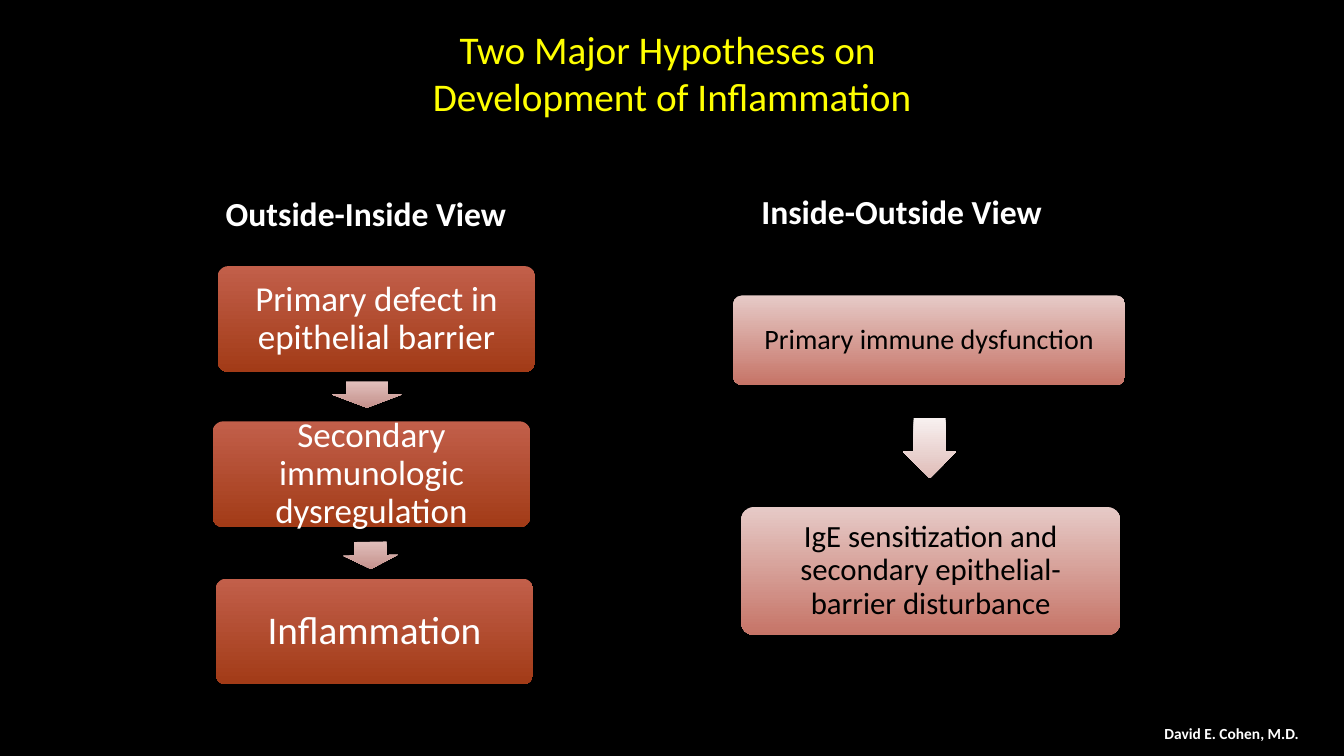
from pptx import Presentation
from pptx.dml.color import RGBColor
from pptx.enum.shapes import MSO_SHAPE as Preset
from pptx.enum.text import MSO_ANCHOR as Anchor, MSO_AUTO_SIZE as AutoSize, PP_ALIGN as Align
from pptx.util import Inches, Pt

SLIDE_W, SLIDE_H = 13.33, 7.5
COLUMNS, ROWS = 40, 30
BLACK, WHITE, YELLOW = "000000", "FFFFFF", "FFFF00"
RUST, ROSE = ("C25F4A", "A23B17"), ("E6CAC7", "C67467")
DUSTY, PALE = ("E1BFBB", "C4918C"), ("F8F1F0", "DFBCB8")


def color(hex_code):
    return RGBColor.from_string(hex_code)


def cols(n):
    return Inches(n * SLIDE_W / COLUMNS)


def rows(n):
    return Inches(n * SLIDE_H / ROWS)


class HypothesisSlide:
    font = "Calibri"

    def __init__(self, deck):
        self.slide = deck.slides.add_slide(deck.slide_layouts[5])
        backdrop = self.slide.background.fill
        backdrop.solid()
        backdrop.fore_color.rgb = color(BLACK)

    def set_text(self, frame, lines, size, ink, bold=False, align=Align.LEFT,
                 anchor=Anchor.TOP, insets=(0.1, 0.05), spacing=1.0, wrap=True):
        frame.word_wrap = wrap
        frame.auto_size = AutoSize.NONE
        frame.vertical_anchor = anchor
        frame.margin_left = frame.margin_right = Inches(insets[0])
        frame.margin_top = frame.margin_bottom = Inches(insets[1])
        paragraph = frame.paragraphs[0]
        paragraph.alignment = align
        paragraph.line_spacing = spacing
        for i, line in enumerate(lines):
            if i:
                paragraph.add_line_break()
            run = paragraph.add_run()
            run.text = line
            run.font.name, run.font.size, run.font.bold = self.font, Pt(size), bold
            run.font.color.rgb = color(ink)

    def title(self, lines, col, row, width, height):
        heading = self.slide.shapes.title
        heading.left, heading.top = cols(col), rows(row)
        heading.width, heading.height = cols(width), rows(height)
        self.set_text(heading.text_frame, lines, 28, YELLOW,
                      align=Align.CENTER, anchor=Anchor.MIDDLE)

    def label(self, text, col, row, width, height, size, **style):
        box = self.slide.shapes.add_textbox(cols(col), rows(row), cols(width), rows(height))
        self.set_text(box.text_frame, [text], size, WHITE, bold=True, **style)

    def shade(self, shape, shades):
        shape.shadow.inherit = False
        shape.line.fill.background()
        shape.fill.gradient()
        shape.fill.gradient_angle = 270
        for stop, tone in zip(shape.fill.gradient_stops, shades):
            stop.color.rgb = color(tone)
        # Keep the gradient vertical when the shape is turned
        for gradient in shape.element.spPr.xpath("a:gradFill"):
            gradient.set("rotWithShape", "0")

    def step(self, text, col, row, width, height, shades, size, ink, inset):
        card = self.slide.shapes.add_shape(
            Preset.ROUNDED_RECTANGLE, cols(col), rows(row), cols(width), rows(height))
        card.adjustments[0] = 0.1
        self.shade(card, shades)
        self.set_text(card.text_frame, [text], size, ink, align=Align.CENTER,
                      anchor=Anchor.MIDDLE, insets=(inset, inset), spacing=0.9)

    def arrow(self, center_col, center_row, breadth, length, shades, turn):
        # The arrow points right until turned, so its width is its length
        w, h = rows(length), cols(breadth)
        pointer = self.slide.shapes.add_shape(
            Preset.RIGHT_ARROW, cols(center_col) - w // 2, rows(center_row) - h // 2, w, h)
        pointer.adjustments[0], pointer.adjustments[1] = 0.6, 0.5
        pointer.rotation = turn
        self.shade(pointer, shades)


def main():
    deck = Presentation()
    deck.slide_width, deck.slide_height = Inches(SLIDE_W), Inches(SLIDE_H)
    page = HypothesisSlide(deck)

    # Title and the two view headings
    page.title(["Two Major Hypotheses on ", "Development of Inflammation"], 0.45, 0.36, 39.1, 5)
    for view, col, row in (("Outside-Inside View", 6.33, 7.36),
                           ("Inside-Outside View", 22.27, 7.28)):
        page.label(view, col, row, 12.45, 2.16, 24, insets=(0.13, 0.07))

    # Outside-inside chain
    for text, col, row, size, inset in (
            ("Primary defect in epithelial barrier", 6.48, 10.56, 25, 0.13),
            ("Secondary immunologic dysregulation", 6.33, 16.72, 25, 0.13),
            ("Inflammation", 6.42, 22.96, 28, 0.15)):
        page.step(text, col, row, 9.45, 4.2, RUST, size, WHITE, inset)
    page.arrow(10.92, 15.66, 2.07, 1.04, DUSTY, 90)
    page.arrow(11.03, 22.04, 1.62, 1.08, DUSTY, 88.9)

    # Inside-outside chain
    page.step("Primary immune dysfunction", 21.82, 11.72, 11.67, 3.56, ROSE, 20, BLACK, 0.11)
    page.arrow(27.67, 17.78, 1.59, 2.4, PALE, 89.7)
    page.step("IgE sensitization and secondary epithelial-barrier disturbance",
              22.06, 20.12, 11.28, 5.08, ROSE, 22, BLACK, 0.13)

    # Credit
    page.label("David E. Cohen, M.D.", 34.36, 28.52, 4.65, 1.16, 11, wrap=False)

    deck.save("out.pptx")


if __name__ == "__main__":
    main()
